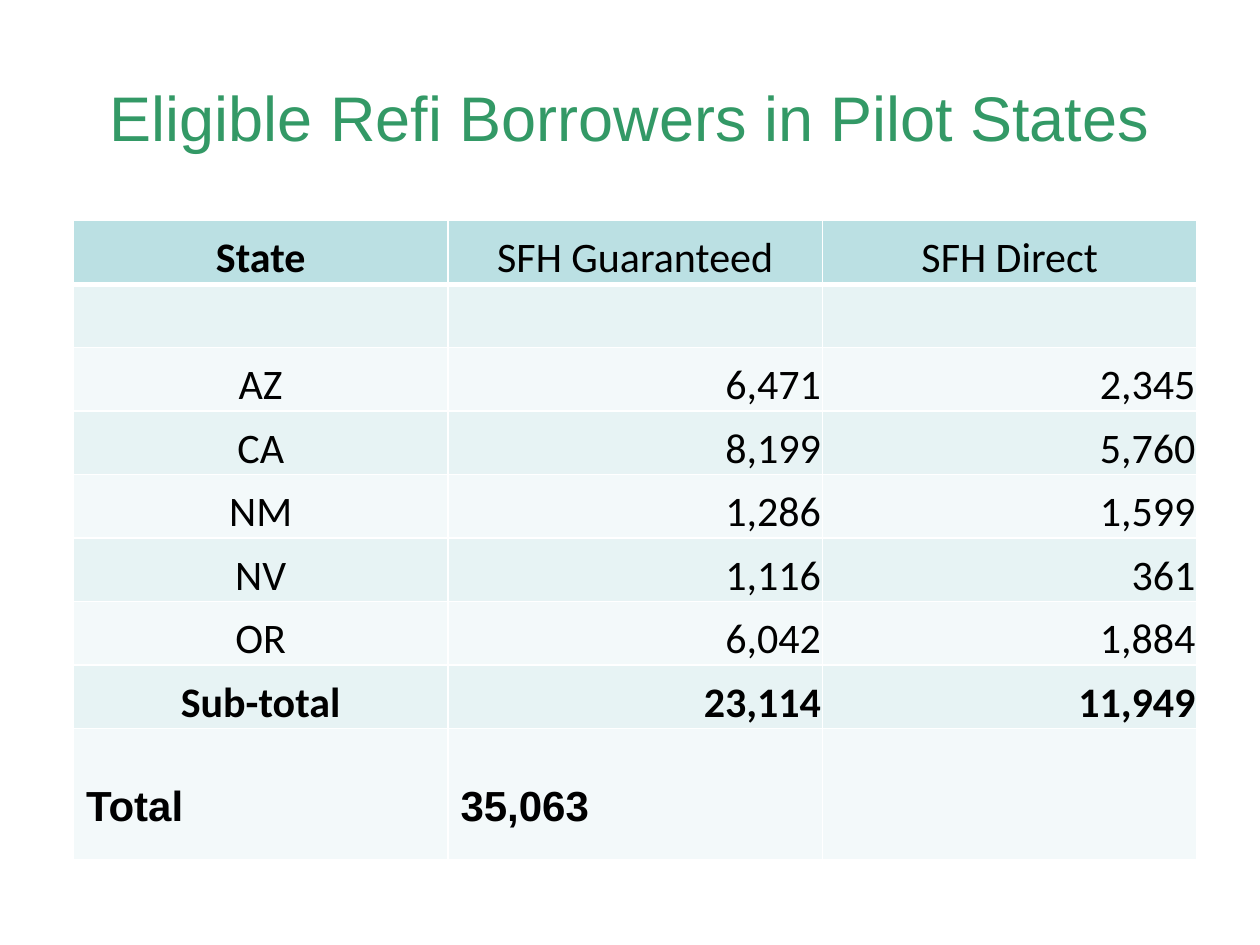
from lxml.etree import SubElement as Sub
from pptx import Presentation
from pptx.dml.color import RGBColor as Rgb
from pptx.enum.text import MSO_ANCHOR as Anchor, PP_ALIGN as Align
from pptx.oxml.ns import qn
from pptx.util import Cm, Pt

COLORS = {
    "title": "339966",
    "text": "000000",
    "head": "BBE0E3",
    "dark": "E7F3F4",
    "light": "F3F9FA",
    "line": "FFFFFF",
}
ROWS = [
    ("State", "SFH Guaranteed", "SFH Direct"),
    ("", "", ""),
    ("AZ", "6,471", "2,345"),
    ("CA", "8,199", "5,760"),
    ("NM", "1,286", "1,599"),
    ("NV", "1,116", "361"),
    ("OR", "6,042", "1,884"),
    ("Sub-total", "23,114", "11,949"),
    ("Total", "35,063", ""),
]


class Deck:
    def __init__(self):
        self.prs = Presentation()
        self.prs.slide_width, self.prs.slide_height = Cm(25.4), Cm(19.05)
        self.slide = self.prs.slides.add_slide(self.prs.slide_layouts[6])

    def label(self, frame, text, size, font, color, align, bold=False):
        para = frame.paragraphs[0]
        para.alignment = align
        run = para.add_run()
        run.text = text
        run.font.size = Pt(size)
        run.font.name = font
        run.font.bold = bold
        run.font.color.rgb = Rgb.from_string(COLORS[color])

    def title(self, text):
        box = self.slide.shapes.add_textbox(Cm(1.27), Cm(0.76), Cm(22.86), Cm(3.18))
        frame = box.text_frame
        frame.word_wrap = True
        frame.vertical_anchor = Anchor.MIDDLE
        self.label(frame, text, 36, "Arial", "title", Align.CENTER)

    def border(self, cell, row):
        props = cell._tc.get_or_add_tcPr()
        widths = {"L": 1, "R": 1, "T": 3 if row == 1 else 1, "B": 3 if row == 0 else 1}
        for side, width in widths.items():
            line = Sub(props, qn(f"a:ln{side}"), w=str(Pt(width)))
            fill = Sub(line, qn("a:solidFill"))
            Sub(fill, qn("a:srgbClr"), val=COLORS["line"])

    def cell(self, cell, text, row, col, last):
        self.border(cell, row)
        shade = "head" if row == 0 else "dark" if row % 2 else "light"
        cell.fill.solid()
        cell.fill.fore_color.rgb = Rgb.from_string(COLORS[shade])
        if not text:
            return
        if row == last:
            cell.margin_top = Cm(1.1)
            font, align = "Arial", Align.LEFT
        else:
            cell.vertical_anchor = Anchor.BOTTOM
            cell.margin_left = cell.margin_right = cell.margin_top = Cm(0.03)
            cell.margin_bottom = 0
            font = "Calibri"
            align = Align.CENTER if row == 0 or col == 0 else Align.RIGHT
        bold = row >= last - 1 or row == col == 0
        self.label(cell.text_frame, text, 24, font, "text", align, bold)

    def table(self, rows):
        last = len(rows) - 1
        shape = self.slide.shapes.add_table(
            len(rows), len(rows[0]), Cm(1.48), Cm(4.45), Cm(22.65), Cm(12.88)
        )
        table = shape.table
        table.first_row = table.horz_banding = False
        for col in table.columns:
            col.width = Cm(7.55)
        for r, texts in enumerate(rows):
            table.rows[r].height = Cm(2.64 if r == last else 1.28)
            for c, text in enumerate(texts):
                self.cell(table.cell(r, c), text, r, c, last)


def main():
    deck = Deck()
    deck.title("Eligible Refi Borrowers in Pilot States")
    deck.table(ROWS)
    deck.prs.save("out.pptx")


if __name__ == "__main__":
    main()
